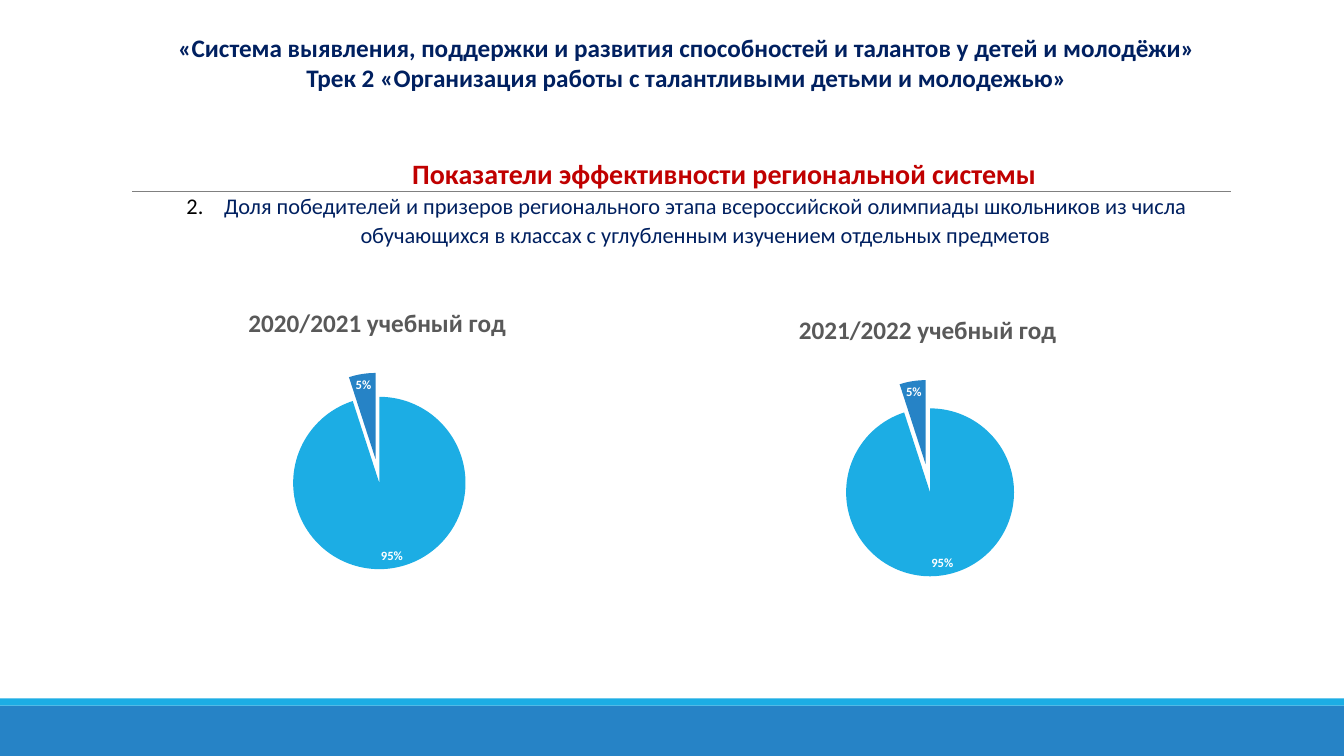
from lxml import etree
from pptx import Presentation
from pptx.chart.data import CategoryChartData
from pptx.dml.color import RGBColor
from pptx.enum.chart import XL_CHART_TYPE, XL_LABEL_POSITION
from pptx.enum.shapes import MSO_CONNECTOR, MSO_SHAPE
from pptx.enum.text import MSO_ANCHOR, MSO_AUTO_SIZE, PP_ALIGN
from pptx.oxml.ns import qn
from pptx.util import Cm, Pt

PIE = XL_CHART_TYPE.PIE
BEST = XL_LABEL_POSITION.BEST_FIT
RECT = MSO_SHAPE.RECTANGLE
LINE = MSO_CONNECTOR.STRAIGHT
TOP = MSO_ANCHOR.TOP
FIXED = MSO_AUTO_SIZE.NONE
CENTER = PP_ALIGN.CENTER

SKY, BLUE, NAVY, RED = "1CADE4", "2683C6", "002060", "C00000"
FACE = "Calibri"


def style(font, size, color, bold=False):
    font.name, font.size, font.bold = FACE, Pt(size), bold
    font.color.rgb = RGBColor.from_string(color)


def layout(**parts):
    """Return a manual chart layout; parts are fractions of the chart."""
    node = etree.Element(qn("c:layout"))
    manual = etree.SubElement(node, qn("c:manualLayout"))
    for name, value in parts.items():
        etree.SubElement(manual, qn("c:" + name), val=str(value))
    return node


deck = Presentation()
deck.slide_width, deck.slide_height = Cm(33.87), Cm(19.05)
slide = deck.slides.add_slide(deck.slide_layouts[1])
shapes = slide.shapes

# Footer bands and rule
for top, height, color in [(17.78, 1.27, BLUE), (17.6, 0.18, SKY)]:
    band = shapes.add_shape(RECT, 0, Cm(top), deck.slide_width, Cm(height))
    band.shadow.inherit = False
    band.fill.solid()
    band.fill.fore_color.rgb = RGBColor.from_string(color)
    band.line.fill.background()

rule = shapes.add_connector(LINE, Cm(3.33), Cm(4.83), Cm(31.01), Cm(4.83))
rule.line.width = Pt(0.5)
rule.line.color.rgb = RGBColor.from_string("808080")
etree.SubElement(rule.element.spPr, qn("a:effectLst"))

# Title and list: text, size, colour, bold, line spacing
title, body = slide.placeholders
blocks = [
    (title, (4.06, 0.64, 26.49, 1.85), [
        ("«Система выявления, поддержки и развития способностей и талантов "
         "у детей и молодёжи»", 18, NAVY, True, 1.07),
        ("Трек 2 «Организация работы с талантливыми детьми и молодежью»",
         18, NAVY, True, 1)]),
    (body, (3.45, 3.76, 27.71, 2.64), [
        ("Показатели эффективности региональной системы", 20, RED, True, 1.07),
        ("Доля победителей и призеров регионального этапа всероссийской "
         "олимпиады школьников из числа обучающихся в классах с углубленным "
         "изучением отдельных предметов", 16, NAVY, False, 1.07)]),
]
for box, place, lines in blocks:
    box.left, box.top, box.width, box.height = map(Cm, place)
    frame = box.text_frame
    frame.text = "\n".join(line[0] for line in lines)
    frame.word_wrap, frame.auto_size = True, FIXED
    frame.vertical_anchor = TOP
    for para, (_, size, color, bold, space) in zip(frame.paragraphs, lines):
        para.alignment, para.line_spacing = CENTER, space
        para.space_before = para.space_after = Pt(0)
        style(para.runs[0].font, size, color, bold)

head, item = (para._p.get_or_add_pPr() for para in body.text_frame.paragraphs)
for props, left, indent in [(head, 1.9, 0), (item, 0.95, -0.95)]:
    props.set("marL", str(Cm(left)))
    props.set("indent", str(Cm(indent)))
etree.SubElement(head, qn("a:buNone"))
tint = etree.SubElement(item, qn("a:buClr"))
etree.SubElement(tint, qn("a:srgbClr"), val="000000")
etree.SubElement(item, qn("a:buFont"), typeface=FACE)
etree.SubElement(item, qn("a:buAutoNum"), type="arabicPeriod", startAt="2")

# One pie per school year
pies = [("2020/2021 учебный год", 3.1, 7.11, 14),
        ("2021/2022 учебный год", 16.97, 7.29, 17)]
for year, left, top, burst in pies:
    data = CategoryChartData(number_format="0%")
    data.categories = ["1", "2"]
    data.add_series("Series 1", [0.95, 0.05])
    chart = shapes.add_chart(PIE, Cm(left), Cm(top), Cm(12.7), Cm(7.62),
                             data).chart
    style(chart.font, 10, "000000")
    chart.has_legend = False

    name = chart.chart_title
    name.text_frame.text = year
    style(name.text_frame.paragraphs[0].runs[0].font, 18, "595959", True)
    for old in name.element.findall(qn("c:layout")):
        name.element.remove(old)
    name.element.find(qn("c:tx")).addnext(
        layout(xMode="edge", yMode="edge", x=0.24, y=0.06))

    area = chart.element.find(".//" + qn("c:plotArea"))
    for old in area.findall(qn("c:layout")):
        area.remove(old)
    area.insert(0, layout(layoutTarget="inner", xMode="edge", yMode="edge",
                          x=0.31, y=0.3, w=0.39, h=0.65))

    plot = chart.plots[0]
    plot.vary_by_categories = True
    for index, color in enumerate([SKY, BLUE]):
        fill = plot.series[0].points[index].format.fill
        fill.solid()
        fill.fore_color.rgb = RGBColor.from_string(color)
    gap = etree.Element(qn("c:explosion"), val=str(burst))
    area.find(".//" + qn("c:ser")).find(qn("c:tx")).addnext(gap)

    plot.has_data_labels = True
    labels = plot.data_labels
    labels.show_value, labels.show_percentage = True, False
    labels.number_format, labels.number_format_is_linked = "0%", False
    labels.position = BEST
    style(labels.font, 9, "FFFFFF", True)

deck.save("out.pptx")
